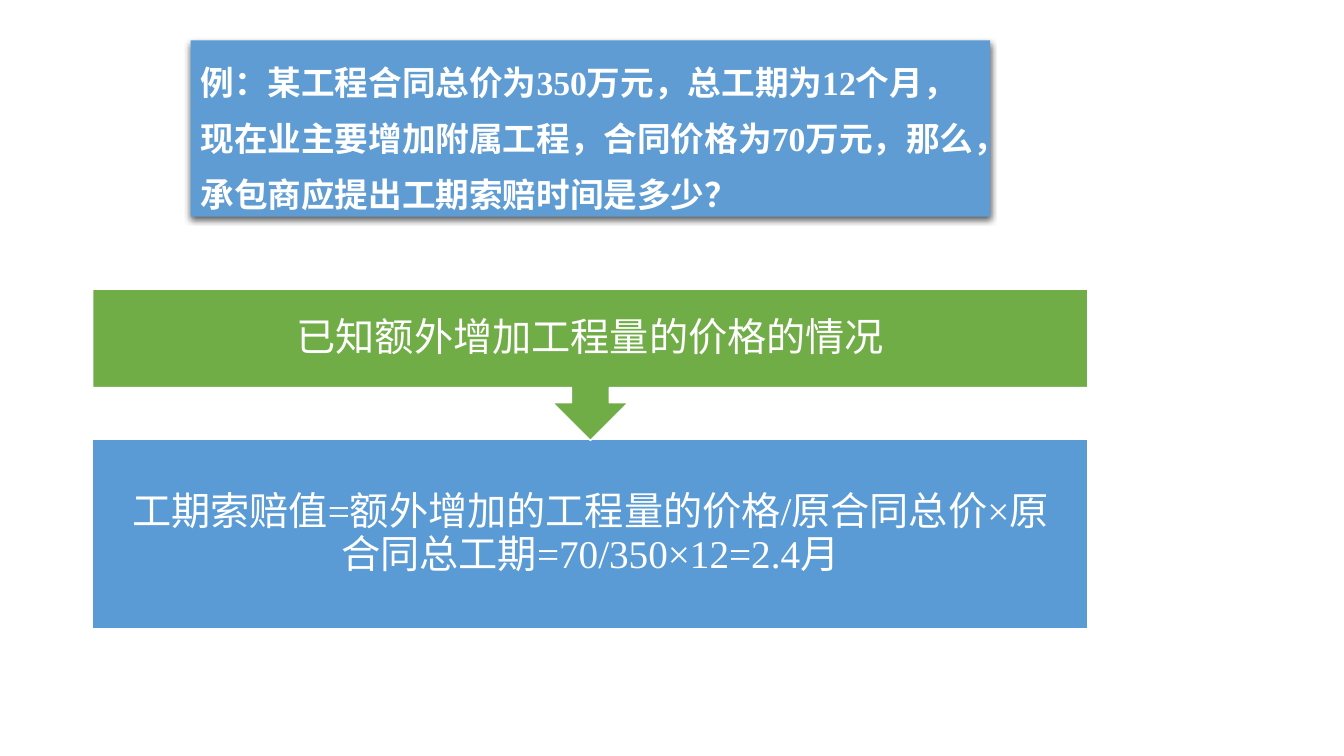
from lxml.etree import SubElement
from pptx import Presentation
from pptx.dml.color import RGBColor
from pptx.enum.shapes import MSO_SHAPE as Shape
from pptx.enum.text import MSO_ANCHOR as Anchor, PP_ALIGN as Align
from pptx.oxml.ns import qn
from pptx.util import Inches, Pt

QUESTION = "例：某工程合同总价为350万元，总工期为12个月，现在业主要增加附属工程，合同价格为70万元，那么，承包商应提出工期索赔时间是多少？"
CONDITION = "已知额外增加工程量的价格的情况"
FORMULA = "工期索赔值=额外增加的工程量的价格/原合同总价×原合同总工期=70/350×12=2.4月"

COLORS = {"question": "5E9CD3", "condition": "70AD47", "formula": "5B9BD5", "white": "FFFFFF", "shadow": "000000"}
FONT = "Times New Roman"
WIDTH, HEIGHT = 13.33, 7.5

FLOW_LEFT, FLOW_WIDTH = 0.92, 9.87
CONDITION_TOP, CALLOUT_HEIGHT, BODY_SHARE = 2.87, 1.5, 0.65
FORMULA_TOP, FORMULA_HEIGHT = 4.36, 1.88
QUESTION_WIDTH = 7.93
QUESTION_LEFT = FLOW_LEFT + (FLOW_WIDTH - QUESTION_WIDTH) / 2

QUESTION_FORMAT = {
    "frame": {"vertical_anchor": Anchor.TOP},
    "para": {"alignment": Align.LEFT, "line_spacing": 1.4, "space_before": Pt(10)},
    "font": {"name": FONT, "size": Pt(24), "bold": True},
}
FLOW_FORMAT = {
    "frame": {"vertical_anchor": Anchor.MIDDLE}
    | {f"margin_{side}": Inches(0.22) for side in ("left", "top", "right", "bottom")},
    "para": {"alignment": Align.CENTER, "line_spacing": 0.9, "space_after": Pt(9.8)},
    "font": {"name": FONT, "size": Pt(28)},
}


def color(name):
    return RGBColor.from_string(COLORS[name])


def apply(target, values):
    for name, value in values.items():
        setattr(target, name, value)


def add_block(page, kind, area, fill, outlined=True):
    block = page.shapes.add_shape(kind, *map(Inches, area))
    block.shadow.inherit = False
    block.fill.solid()
    block.fill.fore_color.rgb = color(fill)
    if outlined:
        block.line.color.rgb = color("white")
        block.line.width = Pt(1)
    else:
        block.line.fill.background()
    return block


def write(box, text, layout):
    frame = box.text_frame
    frame.word_wrap = True
    apply(frame, layout["frame"])
    para = frame.paragraphs[0]
    apply(para, layout["para"])
    span = para.add_run()
    span.text = text
    apply(span.font, layout["font"])
    span.font.color.rgb = color("white")


def add_shadow(block):
    effects = block._element.spPr.find(qn("a:effectLst"))
    shadow = SubElement(effects, qn("a:outerShdw"), blurRad=str(Pt(4.5)), dist=str(Pt(1.5)),
                        dir="5400000", algn="ctr", rotWithShape="0")
    tint = SubElement(shadow, qn("a:srgbClr"), val=COLORS["shadow"])
    SubElement(tint, qn("a:alpha"), val="63000")


def main():
    deck = Presentation()
    deck.slide_width, deck.slide_height = Inches(WIDTH), Inches(HEIGHT)
    page = deck.slides.add_slide(deck.slide_layouts[6])

    question = add_block(page, Shape.RECTANGLE, (QUESTION_LEFT, 0.4, QUESTION_WIDTH, 1.75), "question", False)
    add_shadow(question)
    write(question, QUESTION, QUESTION_FORMAT)

    formula = add_block(page, Shape.RECTANGLE, (FLOW_LEFT, FORMULA_TOP, FLOW_WIDTH, FORMULA_HEIGHT), "formula")
    write(formula, FORMULA, FLOW_FORMAT)

    callout_area = (FLOW_LEFT, CONDITION_TOP, FLOW_WIDTH, CALLOUT_HEIGHT)
    callout = add_block(page, Shape.UP_ARROW_CALLOUT, callout_area, "condition")
    callout.rotation = 180
    label_area = (*callout_area[:3], CALLOUT_HEIGHT * BODY_SHARE)
    label = page.shapes.add_textbox(*map(Inches, label_area))
    write(label, CONDITION, FLOW_FORMAT)

    deck.save("out.pptx")


if __name__ == "__main__":
    main()
